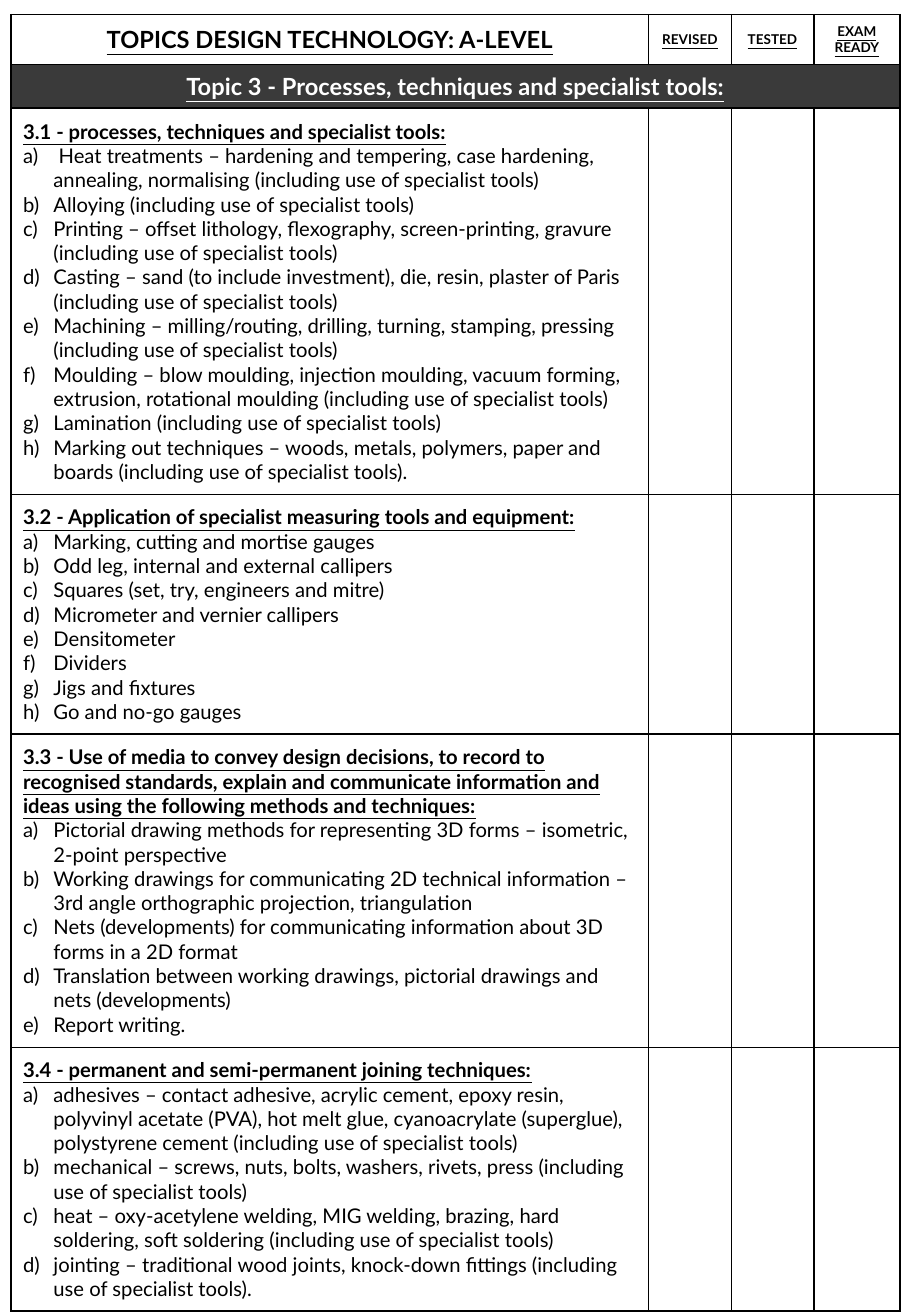
from pptx import Presentation
from pptx.dml.color import RGBColor
from pptx.enum.text import MSO_ANCHOR, PP_ALIGN
from pptx.oxml.xmlchemy import OxmlElement
from pptx.util import Inches, Pt

BLACK, WHITE, CHARCOAL = "000000", "FFFFFF", "3A3A3A"
COLUMNS = [5.25, 0.68, 0.68, 0.71]
ROWS = [0.41, 0.36, 3.18, 1.97, 2.58, 2.17]

HEADER = ["TOPICS DESIGN TECHNOLOGY: A-LEVEL", "REVISED", "TESTED", "EXAM READY"]
TOPIC = "Topic 3 - Processes, techniques and specialist tools:"
SECTIONS = [
    ("3.1 - processes, techniques and specialist tools:", [
        " Heat treatments – hardening and tempering, case hardening, annealing, "
        "normalising (including use of specialist tools)",
        "Alloying (including use of specialist tools)",
        "Printing – offset lithology, flexography, screen-printing, gravure "
        "(including use of specialist tools)",
        "Casting – sand (to include investment), die, resin, plaster of Paris "
        "(including use of specialist tools)",
        "Machining – milling/routing, drilling, turning, stamping, pressing "
        "(including use of specialist tools)",
        "Moulding – blow moulding, injection moulding, vacuum forming, extrusion, "
        "rotational moulding (including use of specialist tools)",
        "Lamination (including use of specialist tools)",
        "Marking out techniques – woods, metals, polymers, paper and boards "
        "(including use of specialist tools).",
    ]),
    ("3.2 - Application of specialist measuring tools and equipment:", [
        "Marking, cutting and mortise gauges",
        "Odd leg, internal and external callipers",
        "Squares (set, try, engineers and mitre)",
        "Micrometer and vernier callipers",
        "Densitometer",
        "Dividers",
        "Jigs and fixtures",
        "Go and no-go gauges",
    ]),
    ("3.3 - Use of media to convey design decisions, to record to recognised "
     "standards, explain and communicate information and ideas using the "
     "following methods and techniques:", [
        "Pictorial drawing methods for representing 3D forms – isometric, "
        "2-point perspective",
        "Working drawings for communicating 2D technical information – 3rd angle "
        "orthographic projection, triangulation",
        "Nets (developments) for communicating information about 3D forms in a "
        "2D format",
        "Translation between working drawings, pictorial drawings and nets "
        "(developments)",
        "Report writing.",
    ]),
    ("3.4 - permanent and semi-permanent joining techniques:", [
        "adhesives – contact adhesive, acrylic cement, epoxy resin, polyvinyl "
        "acetate (PVA), hot melt glue, cyanoacrylate (superglue), polystyrene "
        "cement (including use of specialist tools)",
        "mechanical – screws, nuts, bolts, washers, rivets, press (including use "
        "of specialist tools)",
        "heat – oxy-acetylene welding, MIG welding, brazing, hard soldering, soft "
        "soldering (including use of specialist tools)",
        "jointing – traditional wood joints, knock-down fittings (including use "
        "of specialist tools).",
    ]),
]


def set_color(fmt, color):
    """Give a fill or a font its colour."""
    if hasattr(fmt, "solid"):
        fmt.solid()
        fmt.fore_color.rgb = RGBColor.from_string(color)
    else:
        fmt.color.rgb = RGBColor.from_string(color)


def write(p, text, size, color=BLACK, heading=True, align=PP_ALIGN.LEFT):
    p.text = text
    p.alignment = align
    font = p.runs[0].font
    font.name, font.size = "Lato", Pt(size)
    font.bold = font.underline = heading
    set_color(font, color)


def add_letter(p):
    """Number a paragraph a), b), c) with a hanging indent."""
    pPr = p._p.get_or_add_pPr()
    pPr.set("marL", str(Inches(0.25)))
    pPr.set("indent", str(-Inches(0.25)))
    bullet = OxmlElement("a:buAutoNum")
    bullet.set("type", "alphaLcParenR")
    pPr.append(bullet)


def style_cell(cell, fill=WHITE):
    """Fill a cell and rule it on all four sides."""
    cell.vertical_anchor = MSO_ANCHOR.MIDDLE
    set_color(cell.fill, fill)
    tcPr = cell._tc.get_or_add_tcPr()
    for i, side in enumerate(["a:lnL", "a:lnR", "a:lnT", "a:lnB"]):
        line = OxmlElement(side)
        line.set("w", str(Pt(1)))
        solid, rgb = OxmlElement("a:solidFill"), OxmlElement("a:srgbClr")
        rgb.set("val", BLACK)
        solid.append(rgb)
        line.append(solid)
        tcPr.insert(i, line)


def fill_header(table):
    for i, label in enumerate(HEADER):
        write(table.cell(0, i).text_frame.paragraphs[0], label,
              8 if i else 14, align=PP_ALIGN.CENTER)


def fill_topic(table):
    cell = table.cell(1, 0)
    cell.merge(table.cell(1, len(COLUMNS) - 1))
    write(cell.text_frame.paragraphs[0], TOPIC, 14, WHITE, align=PP_ALIGN.CENTER)


def fill_section(cell, heading, items):
    tf = cell.text_frame
    write(tf.paragraphs[0], heading, 12)
    for item in items:
        p = tf.add_paragraph()
        write(p, item, 12, heading=False)
        add_letter(p)


def add_checklist(s, left, top):
    """Place the whole revision checklist from its top left corner."""
    frame = s.shapes.add_table(len(ROWS), len(COLUMNS), Inches(left), Inches(top),
                               Inches(sum(COLUMNS)), Inches(sum(ROWS)))
    table = frame.table
    table.first_row = table.horz_banding = False
    for column, width in zip(table.columns, COLUMNS):
        column.width = Inches(width)
    for i, (row, height) in enumerate(zip(table.rows, ROWS)):
        row.height = Inches(height)
        for cell in row.cells:
            style_cell(cell, CHARCOAL if i == 1 else WHITE)
    fill_header(table)
    fill_topic(table)
    for i, (heading, items) in enumerate(SECTIONS, start=2):
        fill_section(table.cell(i, 0), heading, items)


def main():
    prs = Presentation()
    prs.slide_width, prs.slide_height = Inches(7.5), Inches(10.83)
    s = prs.slides.add_slide(prs.slide_layouts[6])
    add_checklist(s, 0.09, 0.12)
    prs.save("out.pptx")


if __name__ == "__main__":
    main()
